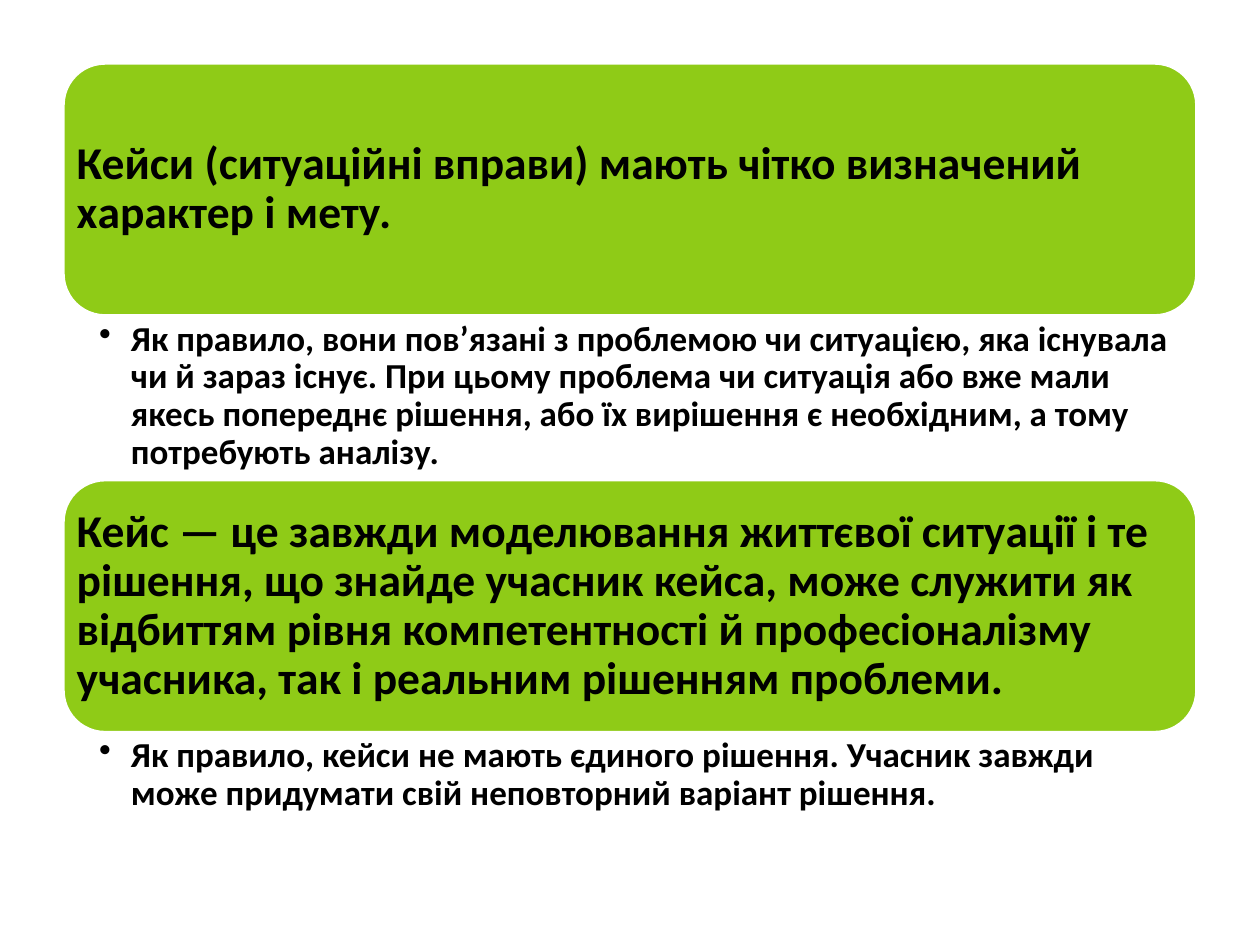
"""Build a slide of two green headings, each followed by a bulleted note."""
import dataclasses

import lxml.etree
import pptx
import pptx.dml.color
import pptx.enum.shapes
import pptx.enum.text
import pptx.oxml.ns
import pptx.util

Cm = pptx.util.Cm


@dataclasses.dataclass(frozen=True)
class Theme:
    font: str = "Calibri"
    green: pptx.dml.color.RGBColor = pptx.dml.color.RGBColor(0x8F, 0xCB, 0x17)
    white: pptx.dml.color.RGBColor = pptx.dml.color.RGBColor(0xFF, 0xFF, 0xFF)
    black: pptx.dml.color.RGBColor = pptx.dml.color.RGBColor(0, 0, 0)
    heading_size: pptx.util.Pt = pptx.util.Pt(26)
    note_size: pptx.util.Pt = pptx.util.Pt(20)
    outline: pptx.util.Pt = pptx.util.Pt(2)


theme = Theme()


def write_text(shape, text, *, size, anchor, insets, bullet=False):
    frame = shape.text_frame
    frame.word_wrap = True
    frame.vertical_anchor = anchor
    frame.margin_left, frame.margin_top, frame.margin_right, frame.margin_bottom = map(Cm, insets)
    paragraph = frame.paragraphs[0]
    paragraph.text = text
    paragraph.alignment = pptx.enum.text.PP_ALIGN.LEFT
    paragraph.line_spacing = 0.9
    if bullet:
        paragraph.level = 1
        properties = paragraph._p.get_or_add_pPr()
        properties.set("marL", str(Cm(0.64)))
        properties.set("indent", str(-Cm(0.64)))
        lxml.etree.SubElement(properties, pptx.oxml.ns.qn("a:buChar")).set("char", "•")
    font = paragraph.runs[0].font
    font.name = theme.font
    font.size = size
    font.bold = True
    font.color.rgb = theme.black


sections = [
    (
        "Кейси (ситуаційні вправи) мають чітко визначений характер і мету.",
        "Як правило, вони пов’язані з проблемою чи ситуацією, яка існувала чи й зараз існує. "
        "При цьому проблема чи ситуація або вже мали якесь попереднє рішення, "
        "або їх вирішення є необхідним, а тому потребують аналізу.",
        3.3,
    ),
    (
        "Кейс — це завжди моделювання життєвої ситуації і те рішення, що знайде учасник кейса, "
        "може служити як відбиттям рівня компетентності й професіоналізму учасника, "
        "так і реальним рішенням проблеми.",
        "Як правило, кейси не мають єдиного рішення. "
        "Учасник завжди може придумати свій неповторний варіант рішення.",
        1.75,
    ),
]

presentation = pptx.Presentation()
presentation.slide_width = Cm(25.4)
presentation.slide_height = Cm(19.05)
slide = presentation.slides.add_slide(presentation.slide_layouts[6])

left, top, width, heading_height = 1.27, 1.27, 22.86, 5.1

for heading_text, note_text, note_height in sections:
    heading = slide.shapes.add_shape(
        pptx.enum.shapes.MSO_SHAPE.ROUNDED_RECTANGLE,
        Cm(left), Cm(top), Cm(width), Cm(heading_height),
    )
    heading.shadow.inherit = False
    heading.fill.solid()
    heading.fill.fore_color.rgb = theme.green
    heading.line.color.rgb = theme.white
    heading.line.width = theme.outline
    write_text(heading, heading_text, size=theme.heading_size,
               anchor=pptx.enum.text.MSO_ANCHOR.MIDDLE, insets=(0.03, 0.03, 0.03, 0.03))
    top += heading_height

    note = slide.shapes.add_textbox(Cm(left), Cm(top), Cm(width), Cm(note_height))
    write_text(note, note_text, size=theme.note_size, bullet=True,
               anchor=pptx.enum.text.MSO_ANCHOR.TOP, insets=(0.73, 0.1, 0.5, 0.1))
    top += note_height

presentation.save("out.pptx")
